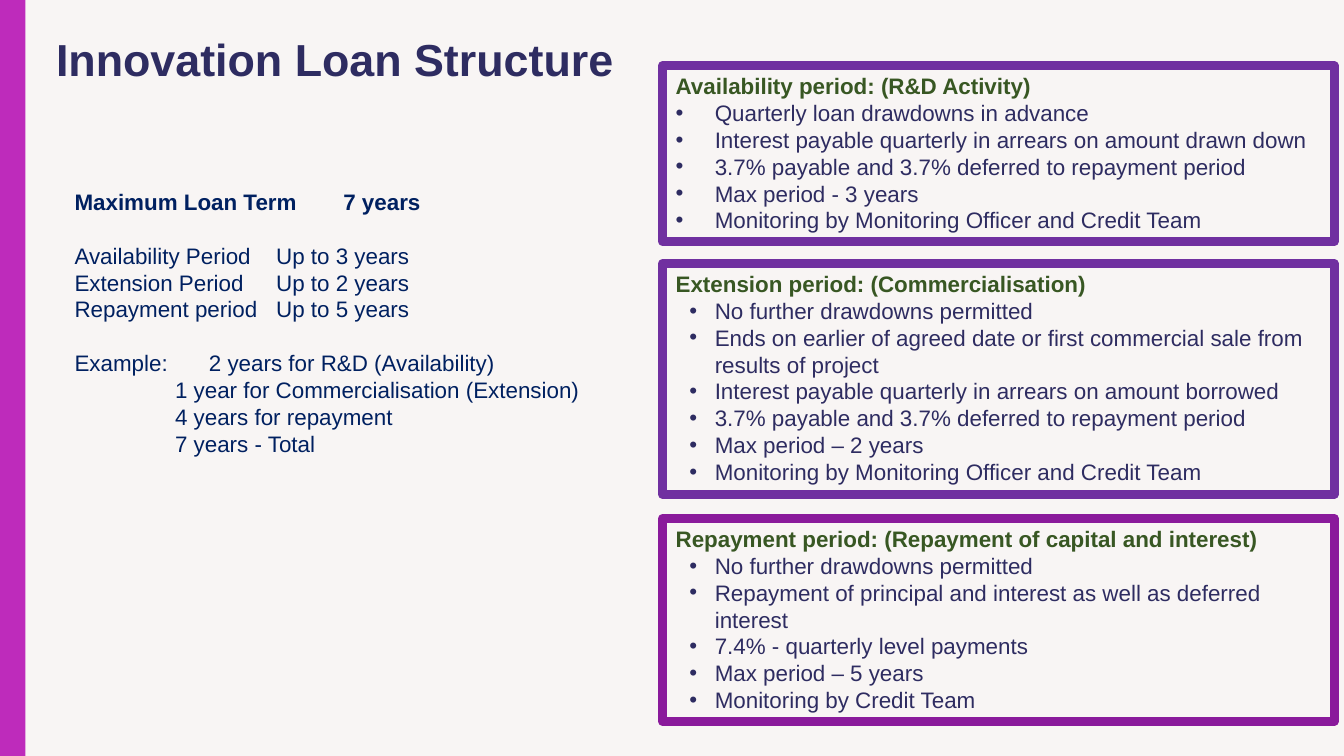
import dataclasses

import lxml.etree
import pptx
import pptx.dml.color
import pptx.enum.shapes
import pptx.enum.text
import pptx.oxml.ns
import pptx.util

Cm = pptx.util.Cm
Pt = pptx.util.Pt
qn = pptx.oxml.ns.qn


@dataclasses.dataclass(frozen=True)
class Theme:
    """Colours and type sizes of the slide."""
    font: str = "Arial"
    background: str = "F8F5F4"
    sidebar: str = "BE2BBB"
    ink: str = "2E2C61"
    navy: str = "002060"
    heading: str = "385723"
    purple: str = "7030A0"
    magenta: str = "8A1A9B"
    title_size: float = 24
    body_size: float = 12
    line_height: float = 14.4
    border: float = 4.5


THEME = Theme()


def rgb(value):
    """Return a colour from its hex code."""
    return pptx.dml.color.RGBColor.from_string(value)


def add_text(frame, text, *, color, size=THEME.body_size, bold=False, spacing=Pt(THEME.line_height),
             before=0, margin=0, hanging=0, bullet=None, tab=None):
    """Append one formatted paragraph to a text frame."""
    paragraph = frame.paragraphs[0]
    if paragraph.runs:
        paragraph = frame.add_paragraph()
    paragraph.alignment = pptx.enum.text.PP_ALIGN.LEFT
    paragraph.line_spacing = spacing
    if before:
        paragraph.space_before = Pt(before)
    properties = paragraph._p.get_or_add_pPr()
    properties.set("marL", str(Cm(margin)))
    properties.set("indent", str(-Cm(hanging)))
    if bullet:
        lxml.etree.SubElement(properties, qn("a:buFont"), typeface=THEME.font)
        lxml.etree.SubElement(properties, qn("a:buChar"), char=bullet)
    if tab:
        stops = lxml.etree.SubElement(properties, qn("a:tabLst"))
        lxml.etree.SubElement(stops, qn("a:tab"), pos=str(Cm(tab)), algn="l")
    run = paragraph.add_run()
    run.text = text
    run.font.name = THEME.font
    run.font.size = Pt(size)
    run.font.bold = bold
    run.font.color.rgb = rgb(color)


def add_rectangle(slide, box):
    """Add a rectangle without shadow in a box given in centimetres."""
    shape = slide.shapes.add_shape(pptx.enum.shapes.MSO_SHAPE.RECTANGLE, *map(Cm, box))
    shape.shadow.inherit = False
    return shape


def add_sidebar(slide, box):
    """Draw the coloured band along the left edge."""
    band = add_rectangle(slide, box)
    band.fill.solid()
    band.fill.fore_color.rgb = rgb(THEME.sidebar)
    band.line.fill.background()


def add_title(slide, box):
    """Place the slide title."""
    frame = slide.shapes.add_textbox(*map(Cm, box)).text_frame
    frame.word_wrap = True
    frame.vertical_anchor = pptx.enum.text.MSO_ANCHOR.MIDDLE
    frame.margin_left = frame.margin_right = Cm(0.19)
    frame.margin_top = frame.margin_bottom = Cm(0.1)
    add_text(frame, "Innovation Loan Structure", color=THEME.ink, size=THEME.title_size,
             bold=True, spacing=0.9)


def add_terms(slide, box):
    """Place the loan terms and the worked example."""
    frame = slide.shapes.add_textbox(*map(Cm, box)).text_frame
    frame.word_wrap = True
    value_tab, example_tab = 5.71, 1.9
    add_text(frame, "Maximum Loan Term\t7 years", color=THEME.navy, bold=True, tab=value_tab + 0.13)
    periods = (("Availability Period", 3), ("Extension Period", 2), ("Repayment period", 5))
    for index, (period, years) in enumerate(periods):
        add_text(frame, f"{period}\tUp to {years} years", color=THEME.navy, tab=value_tab,
                 before=0 if index else THEME.line_height)
    add_text(frame, "Example:\t2 years for R&D (Availability)", color=THEME.navy,
             tab=example_tab, before=THEME.line_height)
    for step in ("1 year for Commercialisation (Extension)", "4 years for repayment",
                 "7 years - Total"):
        add_text(frame, step, color=THEME.navy, margin=example_tab)


def add_panel(slide, box, heading, points, border, hanging=0.48):
    """Draw a bordered panel with a heading and bullet points."""
    panel = add_rectangle(slide, box)
    panel.fill.background()
    panel.line.color.rgb = rgb(border)
    panel.line.width = Pt(THEME.border)
    lxml.etree.SubElement(panel._element.spPr.find(qn("a:ln")), qn("a:round"))
    frame = panel.text_frame
    frame.word_wrap = True
    frame.vertical_anchor = pptx.enum.text.MSO_ANCHOR.TOP
    add_text(frame, heading, color=THEME.heading, bold=True)
    for point in points:
        add_text(frame, point, color=THEME.ink, margin=0.74, hanging=hanging, bullet="•")


def add_panels(slide, left, width):
    """Stack the three period panels in one column."""
    deferred = "3.7% payable and 3.7% deferred to repayment period"
    monitoring = "Monitoring by Monitoring Officer and Credit Team"
    no_drawdowns = "No further drawdowns permitted"
    add_panel(slide, (left, 1.24, width, 3.33), "Availability period: (R&D Activity)", (
        "Quarterly loan drawdowns in advance",
        "Interest payable quarterly in arrears on amount drawn down",
        deferred,
        "Max period - 3 years",
        monitoring,
    ), THEME.purple, hanging=0.74)
    add_panel(slide, (left, 4.98, width, 4.37), "Extension period: (Commercialisation)", (
        no_drawdowns,
        "Ends on earlier of agreed date or first commercial sale from results of project",
        "Interest payable quarterly in arrears on amount borrowed",
        deferred,
        "Max period – 2 years",
        monitoring,
    ), THEME.purple)
    add_panel(slide, (left, 9.8, width, 3.84),
              "Repayment period: (Repayment of capital and interest)", (
        no_drawdowns,
        "Repayment of principal and interest as well as deferred interest",
        "7.4% - quarterly level payments",
        "Max period – 5 years",
        "Monitoring by Credit Team",
    ), THEME.magenta)


def main():
    """Build the slide and save it."""
    presentation = pptx.Presentation()
    presentation.slide_width = Cm(25.4)
    presentation.slide_height = Cm(14.29)
    slide = presentation.slides.add_slide(presentation.slide_layouts[6])
    slide.background.fill.solid()
    slide.background.fill.fore_color.rgb = rgb(THEME.background)
    add_sidebar(slide, (0, 0, 0.48, 14.29))
    add_title(slide, (0.87, 0.64, 23.5, 1.07))
    add_terms(slide, (1.16, 3.43, 10.98, 5.38))
    add_panels(slide, left=12.52, width=12.7)
    presentation.save("out.pptx")


if __name__ == "__main__":
    main()
